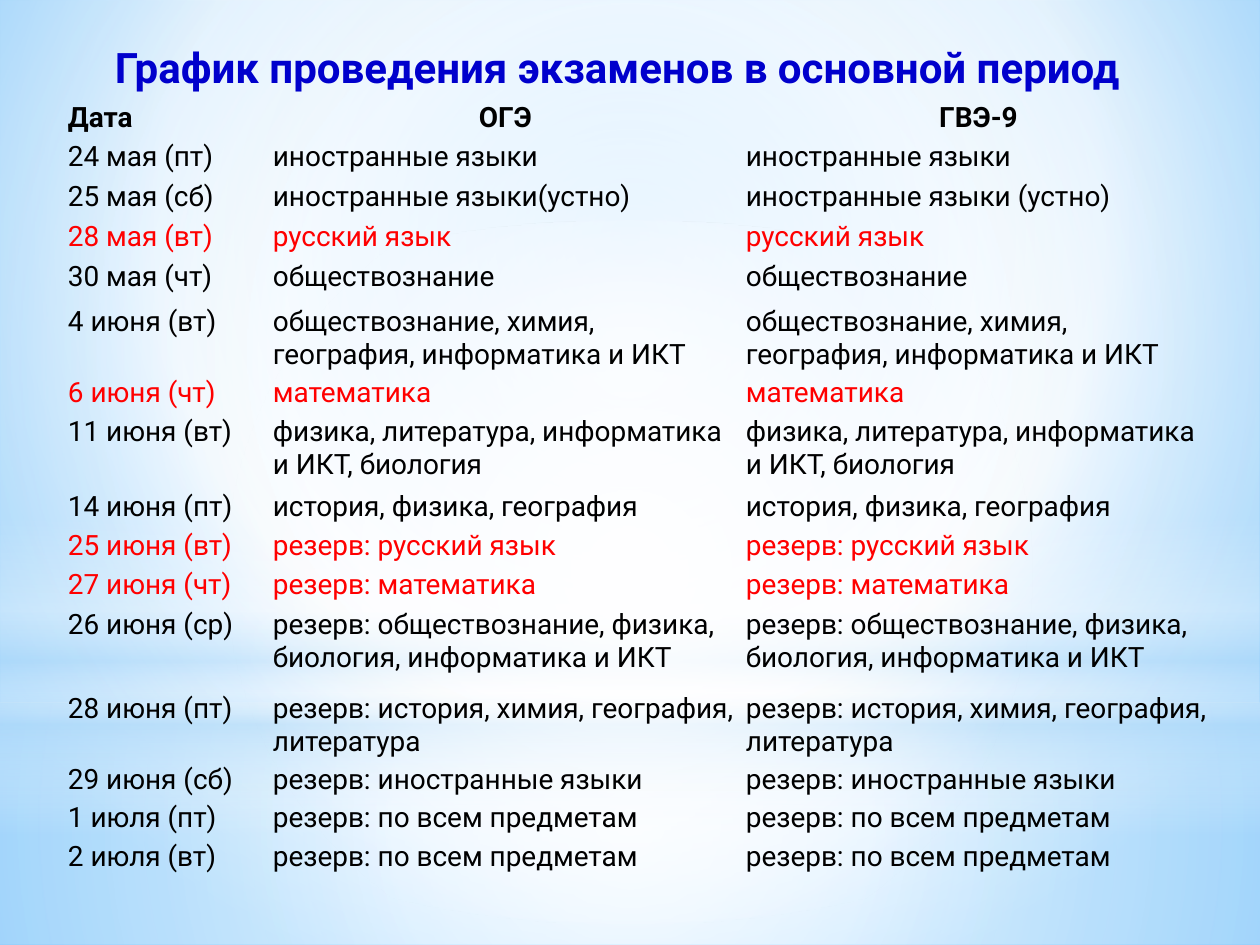
from pptx import Presentation
from pptx.dml.color import RGBColor
from pptx.enum.shapes import MSO_SHAPE
from pptx.enum.text import MSO_ANCHOR, MSO_AUTO_SIZE, PP_ALIGN
from pptx.oxml import parse_xml
from pptx.oxml.ns import nsdecls, qn
from pptx.util import Emu, Pt

RECT, OVAL = MSO_SHAPE.RECTANGLE, MSO_SHAPE.OVAL
CENTER, LEFT = PP_ALIGN.CENTER, PP_ALIGN.LEFT
FONT = "Roboto"
COLORS = {"title": "0000CC", "text": "000000", "key": "FF0000",
          "white": "FFFFFF", "pale": "B4DCFA", "sky": "9ED5FF", "blue": "5BB9FF"}
NO_STYLE = "{2D5ABB26-0587-4C30-8999-92F81FD0307C}"

TITLE = "График проведения экзаменов в основной период"
HEADER = ("Дата", "ОГЭ", "ГВЭ-9")
# date, subjects, row height in px, colour
EXAMS = [
    ("24 мая (пт)", "иностранные языки", 40, "text"),
    ("25 мая (сб)", "иностранные языки(устно)", 40, "text"),
    ("28 мая (вт)", "русский язык", 40, "key"),
    ("30 мая (чт)", "обществознание", 45, "text"),
    ("4 июня (вт)", "обществознание, химия, география, информатика и ИКТ", 71, "text"),
    ("6 июня (чт)", "математика", 39, "key"),
    ("11 июня (вт)", "физика, литература, информатика и ИКТ, биология", 75, "text"),
    ("14 июня (пт)", "история, физика, география", 39, "text"),
    ("25 июня (вт)", "резерв: русский язык", 39, "key"),
    ("27 июня (чт)", "резерв: математика", 40, "key"),
    ("26 июня (ср)", "резерв: обществознание, физика, биология, информатика и ИКТ", 84, "text"),
    ("28 июня (пт)", "резерв: история, химия, география, литература", 71, "text"),
    ("29 июня (сб)", "резерв: иностранные языки", 38, "text"),
    ("1 июля (пт)", "резерв: по всем предметам", 39, "text"),
    ("2 июля (вт)", "резерв: по всем предметам", 39, "text"),
]
# the one date on which the ГВЭ-9 wording differs
GVE_WORDING = {"25 мая (сб)": "иностранные языки (устно)"}

HEADER_HEIGHT = 39
COLUMN_WIDTHS = (205, 473, 473)
TABLE_LEFT, TABLE_TOP = 64, 101

# gradient stops: position %, colour, opacity %
BACKDROP = [(0, "sky", 100), (60, "white", 100), (100, "blue", 100)]
FROM_CENTER = (50, 50, 50, 50)
# shape, box in px, stops, focus rectangle (None for a vertical gradient)
GLOWS = [
    (RECT, (0, 703, 1260, 242),
     [(0, "white", 91), (37, "white", 76), (100, "pale", 79)], FROM_CENTER),
    (RECT, (0, 0, 1260, 703),
     [(0, "white", 89), (48, "white", 62), (100, "pale", 79)], FROM_CENTER),
    (RECT, (0, 519, 1260, 315),
     [(0, "white", 0), (29, "white", 30), (45, "pale", 40),
      (55, "white", 26), (65, "pale", 60), (100, "white", 0)], None),
    (OVAL, (0, 221, 1260, 703), [(0, "white", 100), (56, "white", 0)], FROM_CENTER),
]


def px(n):
    return Emu(round(n * 914400 / 126))


def paint_gradient(fill, owner, stops, focus):
    """Give fill, which lies inside the XML of owner, a gradient with opacity."""
    fill.gradient()
    stop_xml = "".join(
        f'<a:gs pos="{pos * 1000}"><a:srgbClr val="{COLORS[color]}">'
        f'<a:alpha val="{opacity * 1000}"/></a:srgbClr></a:gs>'
        for pos, color, opacity in stops)
    if focus:
        sides = " ".join(f'{side}="{n * 1000}"' for side, n in zip("ltrb", focus))
        direction = f'<a:path path="circle"><a:fillToRect {sides}/></a:path>'
    else:
        direction = '<a:lin ang="5400000" scaled="0"/>'
    plain = owner.find(".//" + qn("a:gradFill"))
    plain.getparent().replace(plain, parse_xml(
        f'<a:gradFill {nsdecls("a")} rotWithShape="1"><a:gsLst>{stop_xml}</a:gsLst>'
        f'{direction}</a:gradFill>'))


def write(frame, text, size, color, bold, align):
    paragraph = frame.paragraphs[0]
    paragraph.alignment = align
    run = paragraph.add_run()
    run.text = text
    run.font.name, run.font.size, run.font.bold = FONT, Pt(size), bold
    run.font.color.rgb = RGBColor.from_string(COLORS[color])


def add_glows(slide):
    for kind, box, stops, focus in GLOWS:
        glow = slide.shapes.add_shape(kind, *map(px, box))
        glow.shadow.inherit = False
        glow.line.fill.background()
        paint_gradient(glow.fill, glow.element, stops, focus)


def place_title(slide):
    title = slide.shapes.title
    slide.shapes.element.append(title.element)  # in front of the glows
    title.left, title.top, title.width, title.height = map(px, (0, 35, 1235, 63))
    frame = title.text_frame
    frame.word_wrap = True
    frame.auto_size = MSO_AUTO_SIZE.SHAPE_TO_FIT_TEXT
    frame.vertical_anchor = MSO_ANCHOR.MIDDLE
    write(frame, TITLE, 24, "title", True, CENTER)


def add_schedule(slide):
    heights = [HEADER_HEIGHT] + [height for _, _, height, _ in EXAMS]
    graphic = slide.shapes.add_table(
        len(heights), len(COLUMN_WIDTHS), px(TABLE_LEFT), px(TABLE_TOP),
        px(sum(COLUMN_WIDTHS)), px(sum(heights)))
    schedule = graphic.table
    schedule.first_row = schedule.horz_banding = False
    graphic.element.find(".//" + qn("a:tableStyleId")).text = NO_STYLE
    for column, width in zip(schedule.columns, COLUMN_WIDTHS):
        column.width = px(width)
    for row, height in zip(schedule.rows, heights):
        row.height = px(height)

    lines = [(HEADER, "text")]
    for date, subjects, _, color in EXAMS:
        lines.append(((date, subjects, GVE_WORDING.get(date, subjects)), color))
    for r, (texts, color) in enumerate(lines):
        for c, text in enumerate(texts):
            cell = schedule.cell(r, c)
            cell.fill.background()
            cell.margin_left = cell.margin_right = px(4)
            cell.margin_top = cell.margin_bottom = px(1)
            is_header = r == 0
            write(cell.text_frame, text, 16, color, is_header,
                  CENTER if is_header and c else LEFT)


def main():
    deck = Presentation()
    deck.slide_width, deck.slide_height = px(1260), px(945)
    slide = deck.slides.add_slide(deck.slide_layouts[5])
    paint_gradient(slide.background.fill, slide.element, BACKDROP, (20, 10, 20, 60))
    add_glows(slide)
    place_title(slide)
    add_schedule(slide)
    deck.save("out.pptx")


if __name__ == "__main__":
    main()
